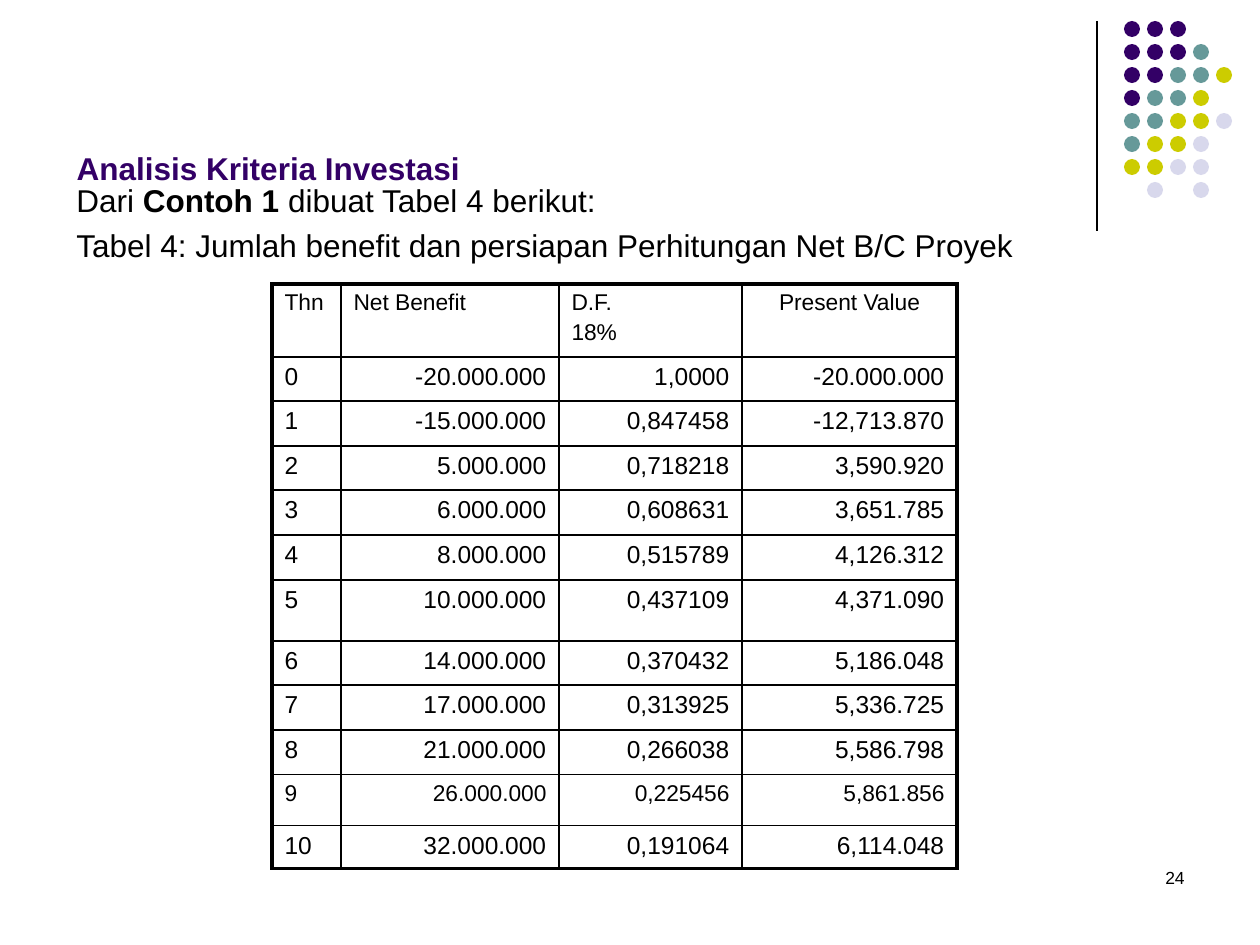
from typing import NamedTuple

from lxml import etree
from pptx import Presentation
from pptx import util as u
from pptx.dml.color import RGBColor
from pptx.enum import shapes, text
from pptx.oxml.ns import qn

EMU_PER_PX = 914400 / 126
BLACK, PURPLE, TEAL, OLIVE, LAVENDER = "000000", "330066", "669999", "CCCC00", "D8D8EC"
LEFT, CENTER, RIGHT = text.PP_ALIGN.LEFT, text.PP_ALIGN.CENTER, text.PP_ALIGN.RIGHT

DOT_COLORS = {"P": PURPLE, "T": TEAL, "O": OLIVE, "L": LAVENDER}
DOT_ROWS = ["PPP", "PPPT", "PPTTO", "PTTO", "TTOOL", "TOOL", "OOLL", " L L"]
DOT_LEFT, DOT_TOP, DOT_PITCH, DOT_SIZE = 1124, 21, 23, 16

THIN, THICK = 1, 2.25
COLUMN_WIDTHS = [69, 218, 183, 215]


class Box(NamedTuple):
    left: int
    top: int
    width: int
    height: int


class TableRow(NamedTuple):
    height: int
    cells: tuple[str, str, str, str]
    size: int = 14
    aligns: tuple = (LEFT, RIGHT, RIGHT, RIGHT)


BENEFIT_ROWS = [
    TableRow(73, ("Thn", "Net Benefit", "D.F.\n18%", "Present Value"), 13,
             (LEFT, LEFT, LEFT, CENTER)),
    TableRow(44, ("0", "-20.000.000", "1,0000", "-20.000.000")),
    TableRow(45, ("1", "-15.000.000", "0,847458", "-12,713.870")),
    TableRow(44, ("2", "5.000.000", "0,718218", "3,590.920")),
    TableRow(45, ("3", "6.000.000", "0,608631", "3,651.785")),
    TableRow(45, ("4", "8.000.000", "0,515789", "4,126.312")),
    TableRow(61, ("5", "10.000.000", "0,437109", "4,371.090")),
    TableRow(44, ("6", "14.000.000", "0,370432", "5,186.048")),
    TableRow(45, ("7", "17.000.000", "0,313925", "5,336.725")),
    TableRow(45, ("8", "21.000.000", "0,266038", "5,586.798")),
    TableRow(51, ("9", "26.000.000", "0,225456", "5,861.856"), 13),
    TableRow(43, ("10", "32.000.000", "0,191064", "6,114.048")),
]


def px(length: int) -> u.Emu:
    return u.Emu(round(length * EMU_PER_PX))


def emu(box: Box) -> list[u.Emu]:
    return [px(length) for length in box]


def rgb(color: str) -> RGBColor:
    return RGBColor.from_string(color)


def write(frame, content: str, *, size: int, color: str = BLACK, bold: bool = False,
          align=LEFT, space_before: float = 0) -> None:
    """Fill a text frame: one paragraph a line, with ** toggling bold."""
    for index, line in enumerate(content.split("\n")):
        paragraph = frame.add_paragraph() if index else frame.paragraphs[0]
        paragraph.alignment = align
        paragraph.space_before = u.Pt(space_before)
        for part, words in enumerate(line.split("**")):
            run = paragraph.add_run()
            run.text = words
            run.font.name = "Arial"
            run.font.size = u.Pt(size)
            run.font.bold = bold or part % 2 == 1
            run.font.color.rgb = rgb(color)


def add_text(slide, box: Box, content: str, **style) -> None:
    frame = slide.shapes.add_textbox(*emu(box)).text_frame
    frame.word_wrap = True
    write(frame, content, **style)


def add_title(slide, box: Box, content: str, **style) -> None:
    title = slide.shapes.title
    title.left, title.top, title.width, title.height = emu(box)
    frame = title.text_frame
    frame.auto_size = text.MSO_AUTO_SIZE.NONE
    frame.vertical_anchor = text.MSO_ANCHOR.BOTTOM
    write(frame, content, **style)


def add_rule(slide, x: int, top: int, bottom: int) -> None:
    rule = slide.shapes.add_connector(shapes.MSO_CONNECTOR.STRAIGHT,
                                      px(x), px(top), px(x), px(bottom))
    rule.line.color.rgb = rgb(BLACK)
    rule.line.width = u.Pt(0.75)
    etree.SubElement(rule._element.spPr, qn("a:effectLst"))


def add_dots(slide) -> None:
    group = slide.shapes.add_group_shape()
    for row, codes in enumerate(DOT_ROWS):
        for column, code in enumerate(codes):
            if code == " ":
                continue
            place = Box(DOT_LEFT + column * DOT_PITCH, DOT_TOP + row * DOT_PITCH,
                        DOT_SIZE, DOT_SIZE)
            dot = group.shapes.add_shape(shapes.MSO_SHAPE.OVAL, *emu(place))
            dot.shadow.inherit = False
            dot.fill.solid()
            dot.fill.fore_color.rgb = rgb(DOT_COLORS[code])
            dot.line.fill.background()


def set_borders(cell, widths: dict[str, float]) -> None:
    properties = cell._tc.get_or_add_tcPr()
    for side, width in widths.items():
        border = etree.SubElement(properties, qn(f"a:ln{side}"), w=str(u.Pt(width)))
        fill = etree.SubElement(border, qn("a:solidFill"))
        etree.SubElement(fill, qn("a:srgbClr"), val=BLACK)


def add_benefit_table(slide, left: int, top: int) -> None:
    last_row, last_column = len(BENEFIT_ROWS) - 1, len(COLUMN_WIDTHS) - 1
    place = Box(left, top, sum(COLUMN_WIDTHS), sum(row.height for row in BENEFIT_ROWS))
    table = slide.shapes.add_table(last_row + 1, last_column + 1, *emu(place)).table
    table.first_row = table.horz_banding = False
    for column, width in zip(table.columns, COLUMN_WIDTHS):
        column.width = px(width)
    for r, row in enumerate(BENEFIT_ROWS):
        table.rows[r].height = px(row.height)
        for c, (content, align) in enumerate(zip(row.cells, row.aligns)):
            cell = table.cell(r, c)
            set_borders(cell, {
                "L": THICK if c == 0 else THIN,
                "R": THICK if c == last_column else THIN,
                "T": THICK if r == 0 else THIN,
                "B": THICK if r == last_row else THIN,
            })
            cell.fill.background()
            write(cell.text_frame, content, size=row.size, align=align,
                  space_before=0.2 * row.size)


def main() -> None:
    deck = Presentation()
    deck.slide_width, deck.slide_height = px(1260), px(945)
    slide = deck.slides.add_slide(deck.slide_layouts[5])

    add_rule(slide, 1097, 21, 231)
    add_dots(slide)
    add_text(slide, Box(903, 861, 294, 63), "24", size=10, align=RIGHT)
    add_title(slide, Box(64, 35, 1134, 158), "Analisis Kriteria Investasi",
              size=18, color=PURPLE, bold=True)
    add_text(slide, Box(64, 175, 1123, 649),
             "Dari **Contoh 1** dibuat Tabel 4 berikut:\n"
             "Tabel 4: Jumlah benefit dan persiapan Perhitungan Net B/C Proyek",
             size=18, space_before=4)
    add_benefit_table(slide, 272, 284)
    deck.save("out.pptx")


if __name__ == "__main__":
    main()
